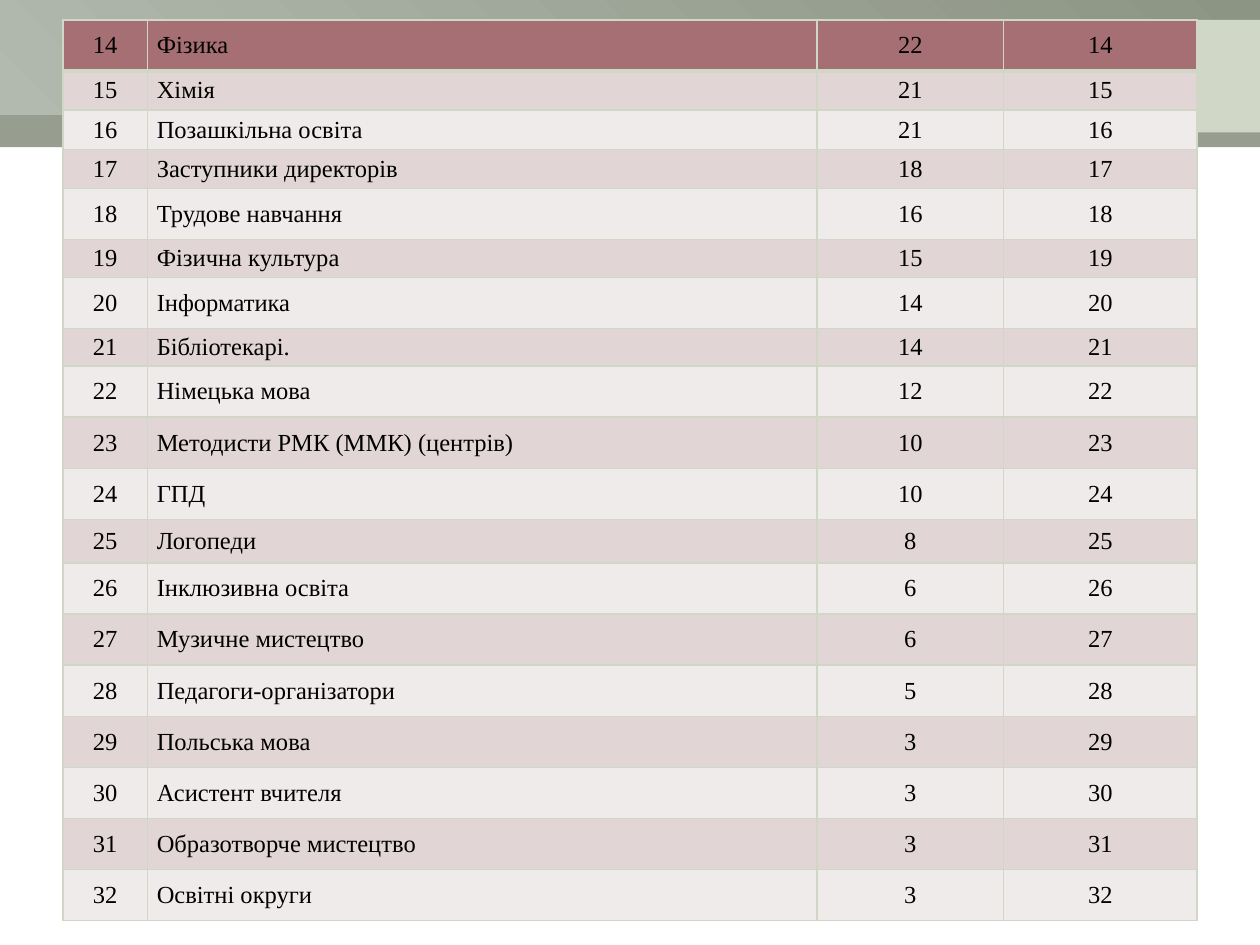
from lxml import etree
from pptx import Presentation
from pptx.dml.color import RGBColor
from pptx.enum.shapes import MSO_SHAPE
from pptx.enum.text import MSO_ANCHOR, PP_ALIGN
from pptx.oxml.ns import qn
from pptx.util import Cm, Pt

RECTANGLE = MSO_SHAPE.RECTANGLE
MIDDLE = MSO_ANCHOR.MIDDLE
LEFT, CENTER = PP_ALIGN.LEFT, PP_ALIGN.CENTER

SAGE, PALE_SAGE, LIGHT_SAGE = "8C9484", "D1D7C7", "B2B9AF"
HEADER_ROSE, ROSE, PALE_ROSE = "A56F73", "E1D5D5", "F0EBEB"
TALL, MEDIUM, LOW, LOWEST = 1.03, 0.88, 0.79, 0.76

subjects = [
    ("Фізика", 22, TALL),
    ("Хімія", 21, LOW),
    ("Позашкільна освіта", 21, LOW),
    ("Заступники директорів", 18, LOW),
    ("Трудове навчання", 16, TALL),
    ("Фізична культура", 15, LOWEST),
    ("Інформатика", 14, TALL),
    ("Бібліотекарі.", 14, LOWEST),
    ("Німецька мова", 12, TALL),
    ("Методисти РМК (ММК) (центрів)", 10, TALL),
    ("ГПД", 10, TALL),
    ("Логопеди", 8, MEDIUM),
    ("Інклюзивна освіта", 6, TALL),
    ("Музичне мистецтво", 6, TALL),
    ("Педагоги-організатори", 5, TALL),
    ("Польська мова", 3, TALL),
    ("Асистент вчителя", 3, TALL),
    ("Образотворче мистецтво", 3, TALL),
    ("Освітні округи", 3, TALL),
]
first_place = 14
column_widths = [1.7, 13.5, 3.76, 3.9]


def color(value):
    return RGBColor.from_string(value)


def add_border(cell, side, points):
    line = etree.SubElement(cell._tc.get_or_add_tcPr(), qn(f"a:ln{side}"), w=str(Pt(points)))
    fill = etree.SubElement(line, qn("a:solidFill"))
    etree.SubElement(fill, qn("a:srgbClr"), val=PALE_SAGE)


prs = Presentation()
prs.slide_width, prs.slide_height = Cm(25.4), Cm(19.05)
slide = prs.slides.add_slide(prs.slide_layouts[6])

bands = []
for left, top, width, height, tone in [
    (0, 1.9, 25.4, 1.07, SAGE),
    (0, 0, 25.4, 2.33, LIGHT_SAGE),
    (2.33, 0.4, 23.07, 2.27, PALE_SAGE),
]:
    band = slide.shapes.add_shape(RECTANGLE, Cm(left), Cm(top), Cm(width), Cm(height))
    band.shadow.inherit = False
    band.line.fill.background()
    band.fill.solid()
    band.fill.fore_color.rgb = color(tone)
    bands.append(band)

lower_band, gradient_band, _ = bands
lower_tone = lower_band._element.spPr.find(".//" + qn("a:srgbClr"))
etree.SubElement(lower_tone, qn("a:alpha"), val="90000")
gradient_band.fill.gradient()
gradient_band.fill.gradient_angle = 45
for stop, position, tone in zip(gradient_band.fill.gradient_stops, (0, 1), (LIGHT_SAGE, SAGE)):
    stop.position = position
    stop.color.rgb = color(tone)

table_height = sum(height for _, _, height in subjects)
ranking = slide.shapes.add_table(
    len(subjects), len(column_widths), Cm(1.27), Cm(0.4), Cm(sum(column_widths)), Cm(table_height)
).table
ranking.first_row = False
ranking.horz_banding = False
for column, width in zip(ranking.columns, column_widths):
    column.width = Cm(width)

for index, (subject, count, height) in enumerate(subjects):
    ranking.rows[index].height = Cm(height)
    place = first_place + index
    row_fill = HEADER_ROSE if index == 0 else (PALE_ROSE, ROSE)[index % 2]
    top_border = 3 if index == 1 else 1
    bottom_border = 3 if index == 0 else 1
    for cell, value in zip(ranking.rows[index].cells, (place, subject, count, place)):
        cell.margin_left = cell.margin_right = Cm(0.19)
        cell.margin_top = cell.margin_bottom = 0
        cell.vertical_anchor = MIDDLE
        for side, points in (("L", 1), ("R", 1), ("T", top_border), ("B", bottom_border)):
            add_border(cell, side, points)
        cell.fill.solid()
        cell.fill.fore_color.rgb = color(row_fill)
        paragraph = cell.text_frame.paragraphs[0]
        paragraph.text = str(value)
        paragraph.alignment = LEFT if value == subject else CENTER
        font = paragraph.runs[0].font
        font.name = "Times New Roman"
        font.size = Pt(14)
        font.color.rgb = color("000000")

prs.save("out.pptx")
